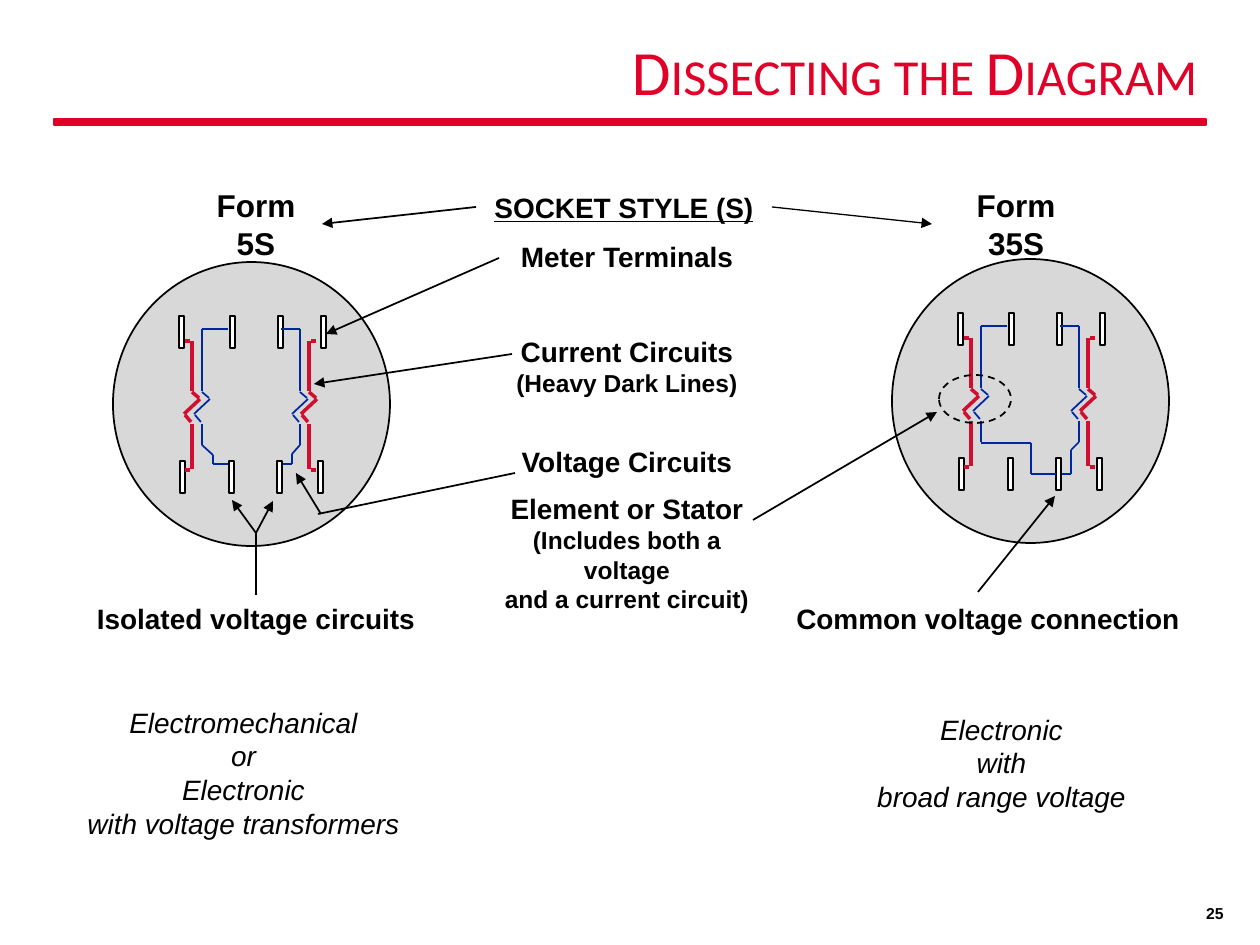
import pptx
import pptx.dml.color
import pptx.enum.dml
import pptx.enum.shapes
import pptx.enum.text
import pptx.oxml.xmlchemy
import pptx.util

PX_PER_INCH = 126
BLACK, WHITE, GREY = "000000", "FFFFFF", "D8D8D8"
BRAND_RED, CURRENT_RED, VOLTAGE_BLUE = "E10027", "CF0E30", "00279F"
SHAPE = pptx.enum.shapes.MSO_SHAPE
ALIGN = pptx.enum.text.PP_ALIGN
ANCHOR = pptx.enum.text.MSO_ANCHOR


def px(value):
    return pptx.util.Emu(round(value * 914400 / PX_PER_INCH))


def color(hex_string):
    return pptx.dml.color.RGBColor.from_string(hex_string)


def sub_element(parent, tag, **attributes):
    element = pptx.oxml.xmlchemy.OxmlElement(tag)
    for key, value in attributes.items():
        element.set(key, value)
    parent.append(element)


def add_text(paragraph, text, size=16, font="Arial", hue=BLACK, bold=False,
             italic=False, underline=False, align=ALIGN.CENTER, before=0):
    paragraph.alignment = align
    paragraph.space_before = pptx.util.Pt(before)
    run = paragraph.add_run()
    run.text = text
    run.font.size = pptx.util.Pt(size)
    run.font.name = font
    run.font.color.rgb = color(hue)
    run.font.bold = bold
    run.font.italic = italic
    run.font.underline = underline
    return run


def add_label(shapes, box, lines, wrap=False, anchor=ANCHOR.MIDDLE, **style):
    """Each line is a string, or a (string, format) pair."""
    label = shapes.add_textbox(*map(px, box))
    frame = label.text_frame
    frame.word_wrap = wrap
    frame.vertical_anchor = anchor
    for index, line in enumerate(lines):
        text, extra = (line, {}) if isinstance(line, str) else line
        paragraph = frame.add_paragraph() if index else frame.paragraphs[0]
        add_text(paragraph, text, **{**style, **extra})
    return label


def add_outline(shapes, kind, box, fill=None, line=BLACK):
    outline = shapes.add_shape(kind, *map(px, box))
    outline.shadow.inherit = False
    if fill:
        outline.fill.solid()
        outline.fill.fore_color.rgb = color(fill)
    else:
        outline.fill.background()
    outline.line.color.rgb = color(line)
    outline.line.width = pptx.util.Pt(1)
    return outline


def add_line(shapes, start, end, hue=BLACK, width=1, arrow=False):
    line = shapes.add_connector(pptx.enum.shapes.MSO_CONNECTOR.STRAIGHT,
                                *map(px, (*start, *end)))
    line.line.color.rgb = color(hue)
    line.line.width = pptx.util.Pt(width)
    if arrow:
        sub_element(line._element.spPr.get_or_add_ln(), "a:tailEnd", type="triangle")
    sub_element(line._element.spPr, "a:effectLst")
    return line


def add_route(shapes, origin, points, hue=VOLTAGE_BLUE, width=1):
    """Wire through points that are measured from the disc's corner."""
    left, top = origin
    placed = [(left + x, top + y) for x, y in points]
    for start, end in zip(placed, placed[1:]):
        add_line(shapes, start, end, hue, width)


def add_coil(shapes, origin, x, top, bottom, **style):
    """Vertical wire with a zigzag in the middle."""
    for section in (
        [(x, top), (x, 129)],
        [(x, 130), (x + 7, 136)],
        [(x + 8, 137), (x - 8, 152)],
        [(x - 7, 153), (x - 1, 160)],
        [(x, 162), (x, bottom)],
    ):
        add_route(shapes, origin, section, **style)


def add_meter(slide, origin, left_lead, right_lead):
    shapes = slide.shapes.add_group_shape().shapes
    left, top = origin
    add_outline(shapes, SHAPE.OVAL, (left, top, 277, 284), GREY)

    # Terminals
    for row_y, columns in ((54, (66, 117, 165, 208)), (199, (67, 116, 164, 205))):
        for x in columns:
            add_outline(shapes, SHAPE.RECTANGLE, (left + x, top + row_y, 5, 32), WHITE)

    # Current circuits, with stubs towards the outer terminals
    for x, side in ((79, -1), (196, 1)):
        add_coil(shapes, origin, x, 79, 207, hue=CURRENT_RED, width=2)
        for y in (79, 208):
            add_route(shapes, origin, [(x + side * 7, y), (x + side * 2, y)],
                      hue=CURRENT_RED, width=2)

    # Voltage circuits, from the inner top terminals to their lower leads
    for x, terminal_x, lead in ((89, 115, left_lead), (187, 168, right_lead)):
        add_route(shapes, origin, [(x, 67), (terminal_x, 67)])
        add_coil(shapes, origin, x, 67, 183)
        add_route(shapes, origin, lead)
    return shapes


def main():
    deck = pptx.Presentation()
    deck.slide_width, deck.slide_height = px(1260), px(945)
    slide = deck.slides.add_slide(deck.slide_layouts[5])
    shapes = slide.shapes

    # Title, rule and page number
    title = shapes.title
    title.left, title.top, title.width, title.height = map(px, (214, 19, 996, 112))
    title.text_frame.vertical_anchor = ANCHOR.MIDDLE
    heading = title.text_frame.paragraphs[0]
    heading.line_spacing = 0.9
    heading_run = add_text(heading, "Dissecting the Diagram", size=36, font="Calibri",
                           hue=BRAND_RED, align=ALIGN.RIGHT)
    heading_run._r.get_or_add_rPr().set("cap", "small")
    add_outline(shapes, SHAPE.RECTANGLE, (54, 119, 1152, 6), BRAND_RED, BRAND_RED)
    add_label(shapes, (903, 882, 333, 63), ["25"], wrap=True, size=9, bold=True,
              align=ALIGN.RIGHT)

    # Meters: isolated leads on 5S, a shared lead on 35S
    add_meter(slide, (113, 262),
              [(89, 183), (100, 193), (100, 202), (115, 202)],
              [(187, 183), (179, 192), (179, 202), (170, 202)])
    form_35s_meter = add_meter(slide, (892, 259),
                               [(89, 184), (139, 184), (139, 215), (164, 215)],
                               [(187, 183), (179, 191), (179, 215), (170, 215)])
    stator_ring = add_outline(form_35s_meter, SHAPE.OVAL, (939, 375, 72, 48))
    stator_ring.line.dash_style = pptx.enum.dml.MSO_LINE.DASH

    # Labels
    socket_style = add_label(shapes, (476, 184, 296, 46), ["SOCKET STYLE (S)"],
                             bold=True, underline=True)
    form_5s = add_label(shapes, (190, 199, 132, 50), ["Form 5S"], size=18, bold=True)
    form_35s = add_label(shapes, (932, 199, 168, 50), ["Form 35S"], size=18, bold=True)
    add_label(shapes, (482, 233, 290, 386), [
        "Meter Terminals",
        ("Current Circuits", {"before": 35}),
        ("(Heavy Dark Lines)", {"size": 14}),
        ("Voltage Circuits", {"before": 27}),
        ("Element or Stator", {"before": 8}),
        ("(Includes both a voltage", {"size": 14}),
        ("and a current circuit)", {"size": 14}),
    ], wrap=True, anchor=ANCHOR.TOP, bold=True)
    isolated = add_label(shapes, (83, 595, 346, 46), ["Isolated voltage circuits"],
                         bold=True)
    add_label(shapes, (783, 595, 410, 46), ["Common voltage connection"], bold=True)
    add_label(shapes, (74, 699, 339, 147),
              ["Electromechanical", "or", "Electronic", "with voltage transformers"],
              italic=True)
    add_label(shapes, (864, 706, 275, 113),
              ["Electronic", "with", "broad range voltage"], italic=True)

    # Arrows from the socket style to both forms
    to_5s = add_line(shapes, (476, 207), (322, 224), arrow=True)
    to_5s.begin_connect(socket_style, 1)
    to_5s.end_connect(form_5s, 3)
    to_35s = add_line(shapes, (772, 207), (932, 224), width=0.75, arrow=True)
    to_35s.begin_connect(socket_style, 3)
    to_35s.end_connect(form_35s, 1)

    # Arrows from the labels to the parts of the meters
    for start, end in (
        ((499, 258), (326, 334)),   # meter terminals
        ((512, 354), (314, 384)),   # current circuits
        ((321, 514), (296, 473)),   # voltage circuits
        ((753, 520), (937, 412)),   # element or stator
        ((978, 592), (1055, 496)),  # common voltage connection
        ((256, 533), (273, 501)),   # isolated voltage circuits
        ((256, 533), (232, 500)),
    ):
        add_line(shapes, start, end, arrow=True)
    add_line(shapes, (515, 473), (318, 514))
    isolated_stem = add_line(shapes, (256, 595), (256, 533))
    isolated_stem.begin_connect(isolated, 0)

    deck.save("out.pptx")


if __name__ == "__main__":
    main()
